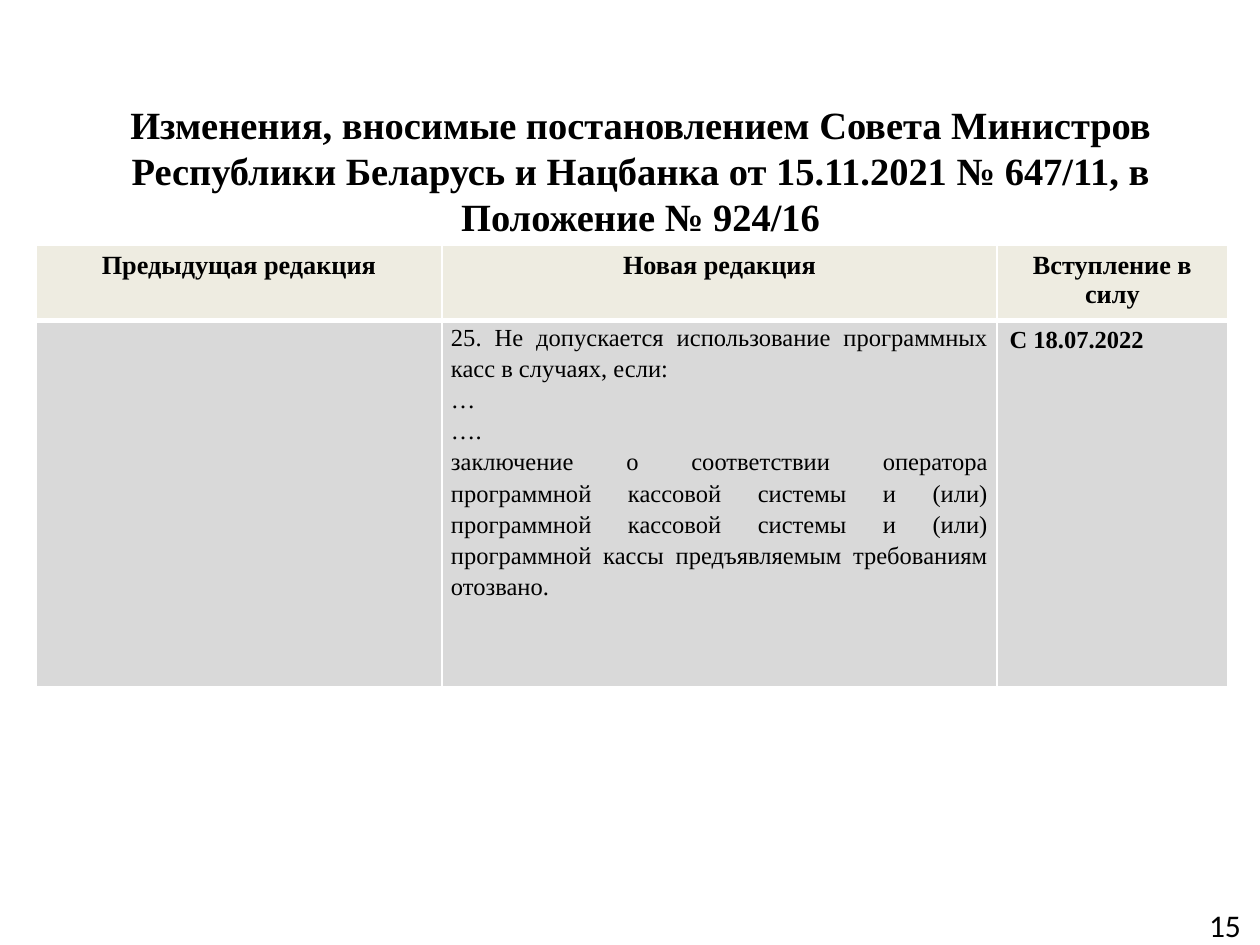
from dataclasses import dataclass

import pptx
import pptx.dml.color
import pptx.enum.text
import pptx.oxml.ns
import pptx.util
from lxml import etree

PX = 914400 // 126
ALIGN = pptx.enum.text.PP_ALIGN
ANCHOR = pptx.enum.text.MSO_ANCHOR


@dataclass(frozen=True)
class Theme:
    serif: str = "Times New Roman"
    sans: str = "Calibri"
    ink: str = "000000"
    header_fill: str = "EEECE1"
    body_fill: str = "D9D9D9"
    rule: str = "FFFFFF"
    title_size: int = 22
    header_size: int = 15
    body_size: int = 14
    number_size: int = 18


THEME = Theme()
HEADINGS = ["Предыдущая редакция", "Новая редакция", "Вступление в силу"]
NEW_WORDING = [
    "25. Не допускается использование программных касс в случаях, если:",
    "…",
    "….",
    "заключение о соответствии оператора программной кассовой системы и (или) "
    "программной кассовой системы и (или) программной кассы предъявляемым "
    "требованиям отозвано.",
]
EFFECTIVE_DATE = "С 18.07.2022"


def px(*lengths):
    return [pptx.util.Emu(length * PX) for length in lengths]


def rgb(value):
    return pptx.dml.color.RGBColor.from_string(value)


def write(frame, lines, size, align, bold=False, face=THEME.serif, spacing=None):
    """Fill a text frame with one paragraph per line."""
    frame.word_wrap = True
    for index, line in enumerate(lines):
        paragraph = frame.add_paragraph() if index else frame.paragraphs[0]
        paragraph.alignment = align
        if spacing:
            paragraph.line_spacing = spacing
        run = paragraph.add_run()
        run.text = line
        run.font.name = face
        run.font.size = pptx.util.Pt(size)
        run.font.bold = bold
        run.font.color.rgb = rgb(THEME.ink)


def style_cell(cell, fill, top, bottom):
    """Set the fill and white rules; top and bottom are rule widths in points."""
    properties = cell._tc.get_or_add_tcPr()
    qn = pptx.oxml.ns.qn
    for side, width in (("L", 1), ("R", 1), ("T", top), ("B", bottom)):
        line = etree.SubElement(properties, qn(f"a:ln{side}"),
                                w=str(pptx.util.Pt(width)))
        solid = etree.SubElement(line, qn("a:solidFill"))
        etree.SubElement(solid, qn("a:srgbClr"), val=THEME.rule)
    cell.fill.solid()
    cell.fill.fore_color.rgb = rgb(fill)


def place_title(slide, left, top, width, height):
    title = slide.shapes.title
    title.left, title.top, title.width, title.height = px(left, top, width, height)
    frame = title.text_frame
    frame.auto_size = pptx.enum.text.MSO_AUTO_SIZE.NONE
    frame.vertical_anchor = ANCHOR.MIDDLE
    write(frame, ["Изменения, вносимые постановлением Совета Министров Республики "
                  "Беларусь и Нацбанка от 15.11.2021 № 647/11, в Положение № 924/16"],
          THEME.title_size, ALIGN.CENTER, bold=True)


def place_page_number(slide, left, top, width, height):
    number = slide.shapes.add_textbox(*px(left, top, width, height))
    number.text_frame.vertical_anchor = ANCHOR.MIDDLE
    write(number.text_frame, ["15"], THEME.number_size, ALIGN.CENTER, face=THEME.sans)


def place_amendments(slide, left, top, column_widths, row_heights):
    """Compare the previous and new wording with the date of effect."""
    box = px(left, top, sum(column_widths), sum(row_heights))
    table = slide.shapes.add_table(2, len(HEADINGS), *box).table
    for row, height in zip(table.rows, px(*row_heights)):
        row.height = height
    for index, width in enumerate(px(*column_widths)):
        table.columns[index].width = width
        heading = table.cell(0, index)
        style_cell(heading, THEME.header_fill, 1, 3)
        write(heading.text_frame, [HEADINGS[index]], THEME.header_size,
              ALIGN.CENTER, bold=True)
        style_cell(table.cell(1, index), THEME.body_fill, 3, 1)

    wording, effective = table.cell(1, 1), table.cell(1, 2)
    wording.margin_left, wording.margin_right = px(9, 9)
    wording.margin_top = wording.margin_bottom = 0
    write(wording.text_frame, NEW_WORDING, THEME.body_size, ALIGN.JUSTIFY, spacing=1.15)
    write(effective.text_frame, [EFFECTIVE_DATE], THEME.body_size, ALIGN.LEFT, bold=True)


def main():
    deck = pptx.Presentation()
    deck.slide_width, deck.slide_height = px(1260, 945)
    slide = deck.slides.add_slide(deck.slide_layouts[5])
    place_title(slide, 54, 106, 1173, 128)
    place_page_number(slide, 1190, 905, 70, 40)
    place_amendments(slide, 36, 245, [406, 555, 231], [70, 366])
    deck.save("out.pptx")


if __name__ == "__main__":
    main()
